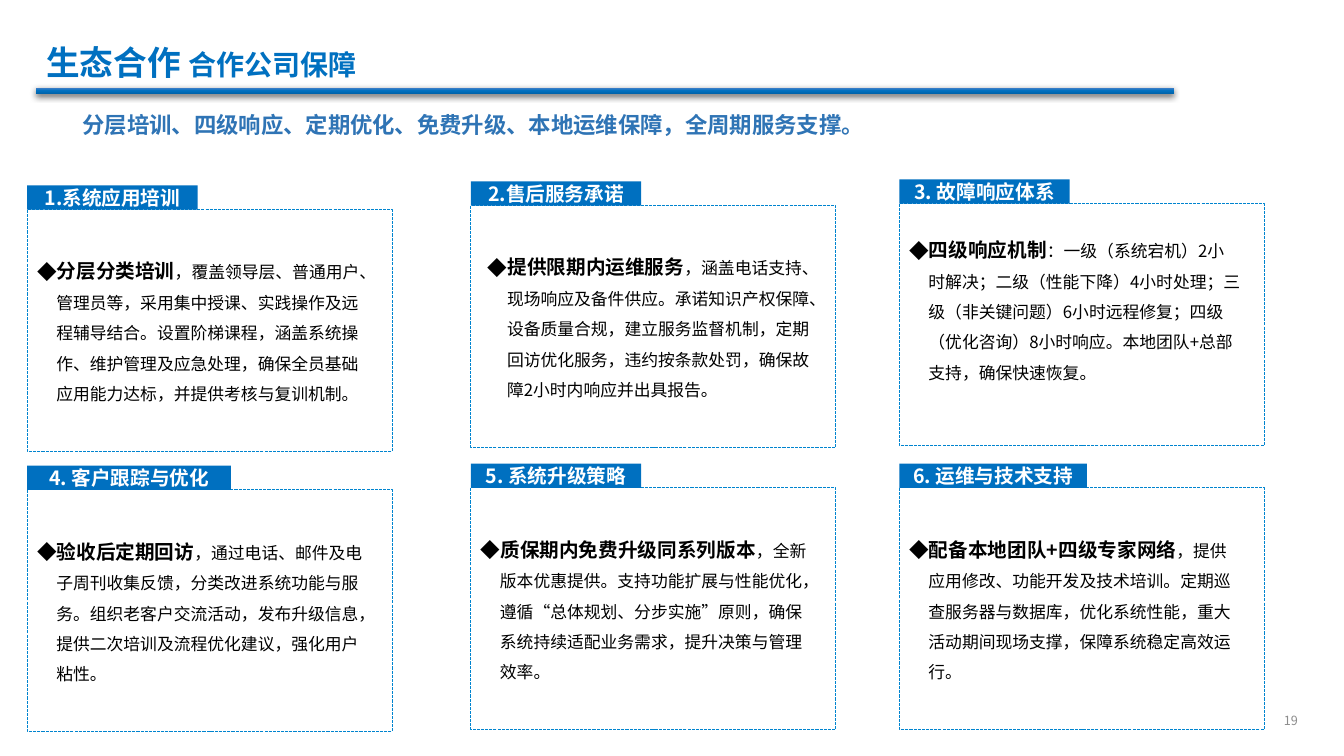
from copy import deepcopy

from lxml import etree
from pptx import Presentation
from pptx.dml.color import RGBColor
from pptx.enum.dml import MSO_LINE
from pptx.enum.shapes import MSO_SHAPE
from pptx.enum.text import MSO_ANCHOR, PP_ALIGN
from pptx.oxml.ns import qn
from pptx.util import Inches, Pt

RECTANGLE = MSO_SHAPE.RECTANGLE
ROUNDED = MSO_SHAPE.ROUNDED_RECTANGLE
DASHED = MSO_LINE.SQUARE_DOT
MIDDLE, BOTTOM = MSO_ANCHOR.MIDDLE, MSO_ANCHOR.BOTTOM
CENTER, RIGHT = PP_ALIGN.CENTER, PP_ALIGN.RIGHT

FONT = "Noto Sans CJK SC"
COLORS = {
    "blue": "0070C0", "bar_top": "4B81C8", "bar_bottom": "0064AB",
    "subtitle": "2F74B5", "frame": "0084CF",
    "black": "000000", "white": "FFFFFF", "gray": "8C8C8C",
}


def add_span(para, text, size, color, bold=False):
    span = para.add_run()
    span.text = text
    span.font.size = Pt(size)
    span.font.bold = bold
    span.font.name = FONT
    span.font.color.rgb = RGBColor.from_string(COLORS[color])
    properties = span._r.get_or_add_rPr()
    properties.set("lang", "zh-CN")
    etree.SubElement(properties, qn("a:ea")).set("typeface", FONT)


def add_text_box(page, left, top, width, height, anchor=MIDDLE):
    box = page.shapes.add_textbox(Inches(left), Inches(top), Inches(width), Inches(height))
    box.text_frame.word_wrap = True
    box.text_frame.vertical_anchor = anchor
    return box.text_frame.paragraphs[0]


deck = Presentation()
deck.slide_width, deck.slide_height = Inches(13.33), Inches(7.5)
page = deck.slides.add_slide(deck.slide_layouts[6])

# Bar under the title, with gradient and soft shadow
bar = page.shapes.add_shape(ROUNDED, Inches(0.36), Inches(0.87), Inches(11.28), Inches(0.06))
bar.line.fill.background()
bar.shadow.inherit = False
bar.fill.gradient()
bar.fill.gradient_angle = 270
stop_list = bar._element.spPr.find(".//" + qn("a:gsLst"))
stop_list.insert(1, deepcopy(stop_list[0]))
for stop, position, color in zip(bar.fill.gradient_stops, (0, 0.5, 1),
                                 ("bar_top", "blue", "bar_bottom")):
    stop.position = position
    stop.color.rgb = RGBColor.from_string(COLORS[color])
effects = bar._element.spPr.find(qn("a:effectLst"))
shadow = etree.SubElement(effects, qn("a:outerShdw"), blurRad=str(Pt(4.5)),
                          dist=str(Pt(1.5)), dir="5400000", rotWithShape="0")
shadow_color = etree.SubElement(shadow, qn("a:srgbClr"), val=COLORS["black"])
etree.SubElement(shadow_color, qn("a:alpha"), val="63000")

# Title, subtitle and page number
para = add_text_box(page, 0.36, 0.17, 11.28, 0.7, BOTTOM)
para.line_spacing = 0.9
add_span(para, "生态合作 ", 24, "blue", True)
add_span(para, "合作公司保障", 20, "blue", True)

para = add_text_box(page, 0.72, 0.92, 12.3, 0.5)
para.line_spacing = 1.5
add_span(para, "分层培训、四级响应、定期优化、免费升级、本地运维保障，全周期服务支撑。",
         16, "subtitle", True)

para = add_text_box(page, 9.97, 6.95, 3, 0.4)
para.alignment = RIGHT
add_span(para, "19", 9, "gray")

# Cards: frame left and top, tab width, body shift (x, y), heading, lead, details
FRAME_WIDTH, FRAME_HEIGHT, TAB_HEIGHT = 3.62, 2.4, 0.24
cards = [
    (0.27, 2.08, 1.69, 0, 0, "1.系统应用培训", "分层分类培训",
     "，覆盖领导层、普通用户、管理员等，采用集中授课、实践操作及远程辅导结合。"
     "设置阶梯课程，涵盖系统操作、维护管理及应急处理，确保全员基础应用能力达标，并提供考核与复训机制。"),
    (4.67, 2.04, 1.69, 0.07, 0, "2.售后服务承诺", "提供限期内运维服务",
     "，涵盖电话支持、现场响应及备件供应。承诺知识产权保障、设备质量合规，"
     "建立服务监督机制，定期回访优化服务，违约按条款处罚，确保故障2小时内响应并出具报告。"),
    (8.92, 2.02, 1.69, 0, -0.15, "3. 故障响应体系", "四级响应机制",
     "：一级（系统宕机）2小时解决；二级（性能下降）4小时处理；三级（非关键问题）6小时远程修复；"
     "四级（优化咨询）8小时响应。本地团队+总部支持，确保快速恢复。"),
    (0.27, 4.86, 2.02, 0, 0, "4. 客户跟踪与优化", "验收后定期回访",
     "，通过电话、邮件及电子周刊收集反馈，分类改进系统功能与服务。"
     "组织老客户交流活动，发布升级信息，提供二次培训及流程优化建议，强化用户粘性。"),
    (4.67, 4.84, 1.69, 0, 0, "5. 系统升级策略", "质保期内免费升级同系列版本",
     "，全新版本优惠提供。支持功能扩展与性能优化，"
     "遵循“总体规划、分步实施”原则，确保系统持续适配业务需求，提升决策与管理效率。"),
    (8.92, 4.84, 1.86, 0, 0, "6. 运维与技术支持", "配备本地团队+四级专家网络",
     "，提供应用修改、功能开发及技术培训。"
     "定期巡查服务器与数据库，优化系统性能，重大活动期间现场支撑，保障系统稳定高效运行。"),
]
for left, top, tab_width, shift_x, shift_y, heading, lead, details in cards:
    frame = page.shapes.add_shape(RECTANGLE, Inches(left), Inches(top),
                                  Inches(FRAME_WIDTH), Inches(FRAME_HEIGHT))
    frame.shadow.inherit = False
    frame.fill.background()
    frame.line.color.rgb = RGBColor.from_string(COLORS["frame"])
    frame.line.width = Pt(0.75)
    frame.line.dash_style = DASHED

    tab = page.shapes.add_shape(RECTANGLE, Inches(left), Inches(top - TAB_HEIGHT),
                                Inches(tab_width), Inches(TAB_HEIGHT))
    tab.shadow.inherit = False
    tab.fill.solid()
    tab.fill.fore_color.rgb = RGBColor.from_string(COLORS["blue"])
    tab.line.fill.background()
    label = tab.text_frame
    label.word_wrap = False
    label.vertical_anchor = MIDDLE
    label.margin_top = label.margin_bottom = 0
    label.paragraphs[0].alignment = CENTER
    add_span(label.paragraphs[0], heading, 14, "white", True)

    para = add_text_box(page, left + shift_x, top + 0.05 + shift_y, 3.48, 2.2)
    para.line_spacing = 1.5
    layout = para._p.get_or_add_pPr()
    layout.set("marL", str(Inches(0.19)))
    layout.set("indent", str(-Inches(0.19)))
    etree.SubElement(layout, qn("a:buFont"), typeface=FONT)
    etree.SubElement(layout, qn("a:buChar"), char="◆")
    add_span(para, lead, 14, "black", True)
    add_span(para, details, 12, "black")

deck.save("out.pptx")
